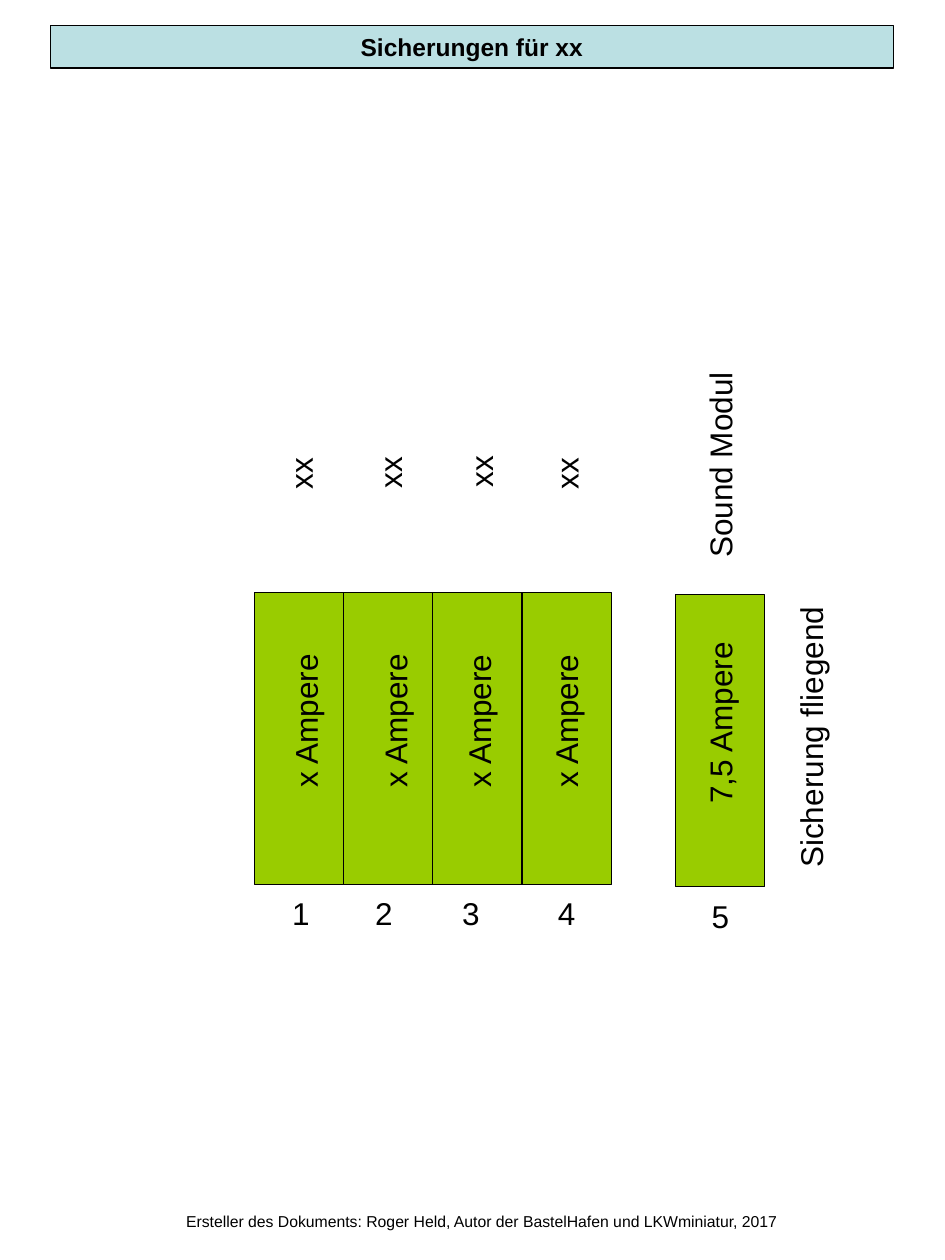
import pptx
import pptx.util
import pptx.dml.color
import pptx.enum.shapes
import pptx.enum.text

Pt = pptx.util.Pt
Color = pptx.dml.color.RGBColor.from_string
Align = pptx.enum.text.PP_ALIGN

THEME = {
    "font": "Arial", "text": "000000", "line": "000000", "line_width": 0.75,
    "title_fill": "BBE0E3", "fuse_fill": "99CC00",
    "title_size": 14, "label_size": 18, "footer_size": 9,
}

TITLE = "Sicherungen für xx"
FOOTER = "Ersteller des Dokuments: Roger Held, Autor der BastelHafen und LKWminiatur, 2017"

# Each label: text, box length, horizontal centre, vertical centre
FUSES = [
    {"number": ("1", 24.5, 172.1, 522), "rating": ("x Ampere", 91.5, 174.6, 411.1),
     "consumer": ("xx", 32.4, 171.7, 270.7)},
    {"number": ("2", 24.5, 219.6, 522), "rating": ("x Ampere", 91.5, 225.7, 411.1),
     "consumer": ("xx", 32.4, 222.8, 270)},
    {"number": ("3", 24.5, 269.3, 522), "rating": ("x Ampere", 92, 273.6, 411.1),
     "consumer": ("xx", 32.4, 274.7, 269.3)},
    {"number": ("4", 24.5, 324, 522), "rating": ("x Ampere", 92, 323.3, 411.1),
     "consumer": ("xx", 32.4, 323.6, 270.7)},
    {"number": ("5", 24.5, 411.8, 523.4), "rating": ("7,5 Ampere", 107.3, 411.5, 412.6),
     "consumer": ("Sound Modul", 121.7, 411.5, 265)},
]
FLYING_NOTE = ("Sicherung fliegend", 164.9, 463.3, 420.5)

FUSE_WIDTH, FUSE_HEIGHT = 51, 167
BLOCK_LEFT, BLOCK_TOP = 145.3, 338.4
FLYING_LEFT, FLYING_TOP = 386, 339.8
LABEL_HEIGHT = 29


def write(shape, text, size, align=Align.LEFT, bold=False, wrap=True):
    frame = shape.text_frame
    frame.word_wrap = wrap
    paragraph = frame.paragraphs[0]
    paragraph.alignment = align
    run = paragraph.add_run()
    run.text = text
    run.font.name = THEME["font"]
    run.font.size = Pt(size)
    run.font.bold = bold
    run.font.color.rgb = Color(THEME["text"])


def add_box(slide, left, top, width, height, fill):
    shape = slide.shapes.add_shape(pptx.enum.shapes.MSO_SHAPE.RECTANGLE,
                                   Pt(left), Pt(top), Pt(width), Pt(height))
    shape.shadow.inherit = False
    shape.fill.solid()
    shape.fill.fore_color.rgb = Color(fill)
    shape.line.color.rgb = Color(THEME["line"])
    shape.line.width = Pt(THEME["line_width"])
    return shape


def add_label(slide, label, rotation=0):
    text, length, center_x, center_y = label
    shape = slide.shapes.add_textbox(Pt(center_x - length / 2), Pt(center_y - LABEL_HEIGHT / 2),
                                     Pt(length), Pt(LABEL_HEIGHT))
    shape.rotation = rotation
    write(shape, text, THEME["label_size"], wrap=False)


def main():
    presentation = pptx.Presentation()
    presentation.slide_width, presentation.slide_height = Pt(540), Pt(720)
    slide = presentation.slides.add_slide(presentation.slide_layouts[6])

    footer = slide.shapes.add_textbox(Pt(27.4), Pt(689), Pt(495.4), Pt(17.3))
    write(footer, FOOTER, THEME["footer_size"], Align.CENTER)

    title = add_box(slide, 28.8, 14.4, 481.7, 24.5, THEME["title_fill"])
    write(title, TITLE, THEME["title_size"], Align.CENTER, bold=True)

    positions = [(BLOCK_LEFT + i * FUSE_WIDTH, BLOCK_TOP) for i in range(len(FUSES) - 1)]
    positions.append((FLYING_LEFT, FLYING_TOP))
    for left, top in positions:
        add_box(slide, left, top, FUSE_WIDTH, FUSE_HEIGHT, THEME["fuse_fill"])
    for fuse in FUSES:
        add_label(slide, fuse["number"])
        add_label(slide, fuse["rating"], 270)
        add_label(slide, fuse["consumer"], 270)
    add_label(slide, FLYING_NOTE, 270)

    presentation.save("out.pptx")


if __name__ == "__main__":
    main()
